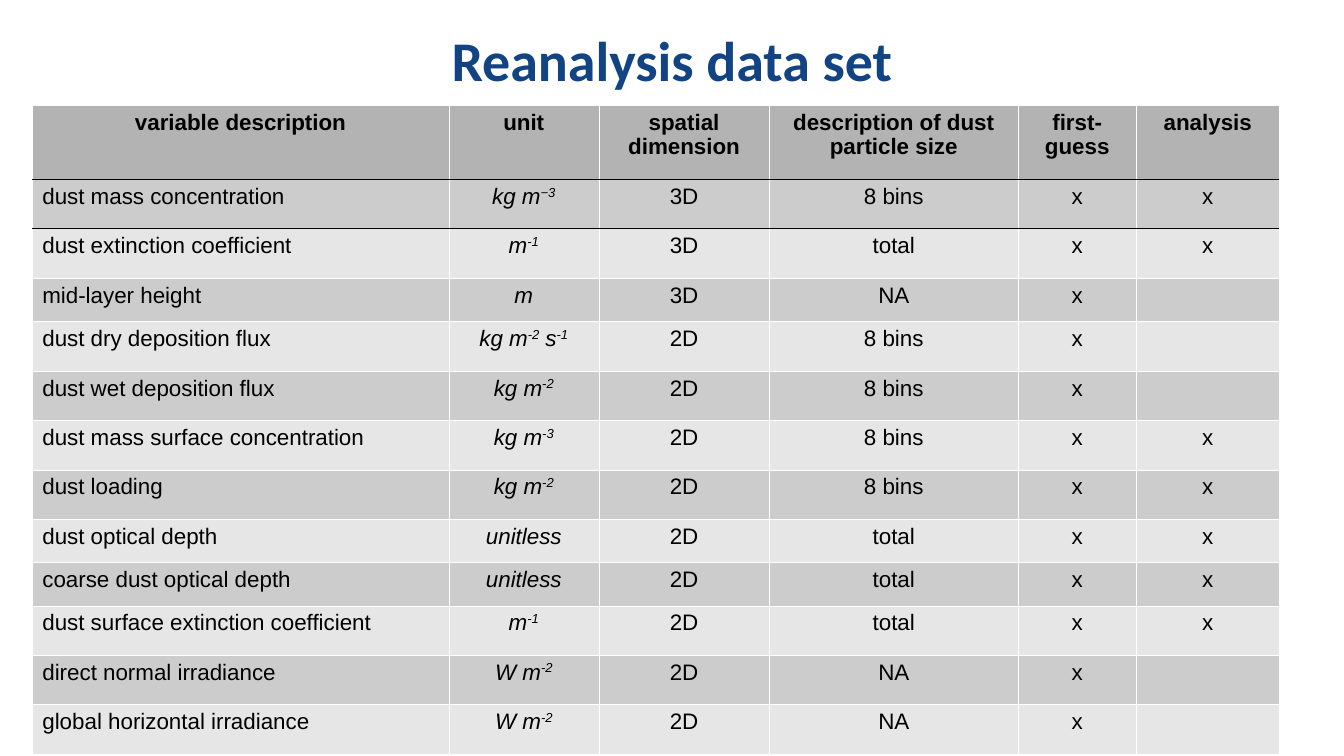
from lxml import etree
from pptx import Presentation
from pptx.dml.color import RGBColor
from pptx.enum.text import MSO_ANCHOR, PP_ALIGN
from pptx.oxml.ns import qn
from pptx.util import Inches, Pt

LEFT, CENTER = PP_ALIGN.LEFT, PP_ALIGN.CENTER
TOP = MSO_ANCHOR.TOP

TITLE_BLUE = RGBColor(0x12, 0x44, 0x84)
BLACK = RGBColor(0x00, 0x00, 0x00)
WHITE = RGBColor(0xFF, 0xFF, 0xFF)
HEADER_GRAY = RGBColor(0xB3, 0xB3, 0xB3)
DARK_BAND = RGBColor(0xCC, 0xCC, 0xCC)
LIGHT_BAND = RGBColor(0xE6, 0xE6, 0xE6)

HAIRLINE, RULE = Pt(0.06), Pt(1)
UNIT_COLUMN = 1
SUPERSCRIPT = "33000"

COLUMN_WIDTHS = [4.13, 1.49, 1.69, 2.47, 1.17, 1.42]
HEADER_HEIGHT, TALL_ROW, SHORT_ROW = 0.74, 0.49, 0.43
SHORT_ROWS = (3, 8, 9)

HEADER = ["variable description", "unit", "spatial\ndimension",
          "description of dust particle size", "first-guess", "analysis"]
# Carets enclose the superscript parts of a unit
VARIABLES = [
    ["dust mass concentration", "kg m^−3", "3D", "8 bins", "x", "x"],
    ["dust extinction coefficient", "m^-1", "3D", "total", "x", "x"],
    ["mid-layer height", "m", "3D", "NA", "x", ""],
    ["dust dry deposition flux", "kg m^-2^ s^-1", "2D", "8 bins", "x", ""],
    ["dust wet deposition flux", "kg m^-2", "2D", "8 bins", "x", ""],
    ["dust mass surface concentration", "kg m^-3", "2D", "8 bins", "x", "x"],
    ["dust loading", "kg m^-2", "2D", "8 bins", "x", "x"],
    ["dust optical depth", "unitless", "2D", "total", "x", "x"],
    ["coarse dust optical depth", "unitless", "2D", "total", "x", "x"],
    ["dust surface extinction coefficient", "m^-1", "2D", "total", "x", "x"],
    ["direct normal irradiance", "W m^-2", "2D", "NA", "x", ""],
    ["global horizontal irradiance", "W m^-2", "2D", "NA", "x", ""],
]


def format_font(font, name, size, color, bold=False, italic=False):
    font.name = name
    font.size = Pt(size)
    font.color.rgb = color
    font.bold = bold
    font.italic = italic


def add_title(slide, left, top, width, height):
    box = slide.shapes.add_textbox(left, top, width, height)
    frame = box.text_frame
    frame.word_wrap = True
    frame.vertical_anchor = TOP
    frame.text = "Reanalysis data set"
    paragraph = frame.paragraphs[0]
    paragraph.alignment = CENTER
    paragraph.line_spacing = 0.9
    format_font(paragraph.runs[0].font, "Calibri", 40, TITLE_BLUE, bold=True)


def set_border(cell, side, color, width):
    properties = cell._tc.get_or_add_tcPr()
    line = etree.SubElement(properties, qn(f"a:ln{side}"), w=str(int(width)))
    fill = etree.SubElement(line, qn("a:solidFill"))
    etree.SubElement(fill, qn("a:srgbClr"), val=str(color))


def fill_cell(cell, text, row, column):
    # Borders: black rules above and below the first variable
    ruled_sides = {0: "B", 1: "TB", 2: "T"}.get(row, "")
    for side in "LRTB":
        if side in ruled_sides:
            set_border(cell, side, BLACK, RULE)
        else:
            set_border(cell, side, WHITE, HAIRLINE)

    # Banded fill
    cell.fill.solid()
    if row == 0:
        cell.fill.fore_color.rgb = HEADER_GRAY
    else:
        cell.fill.fore_color.rgb = DARK_BAND if row % 2 else LIGHT_BAND

    # Text
    is_header = row == 0
    is_unit = column == UNIT_COLUMN and not is_header
    if is_unit:
        paragraph = cell.text_frame.paragraphs[0]
        for index, part in enumerate(text.split("^")):
            run = paragraph.add_run()
            run.text = part
            if index % 2:
                run._r.get_or_add_rPr().set("baseline", SUPERSCRIPT)
    else:
        cell.text_frame.text = text
    for paragraph in cell.text_frame.paragraphs:
        paragraph.alignment = CENTER if is_header or column else LEFT
        for run in paragraph.runs:
            format_font(run.font, "Arial", 16, BLACK, is_header, is_unit)


def add_variable_table(slide, left, top, width, height):
    rows = [HEADER] + VARIABLES
    frame = slide.shapes.add_table(len(rows), len(HEADER), left, top, width, height)
    table = frame.table
    table.first_row = False
    table.horz_banding = False
    for column, column_width in zip(table.columns, COLUMN_WIDTHS):
        column.width = Inches(column_width)
    for row, texts in enumerate(rows):
        row_height = SHORT_ROW if row in SHORT_ROWS else TALL_ROW
        table.rows[row].height = Inches(row_height if row else HEADER_HEIGHT)
        for column, text in enumerate(texts):
            fill_cell(table.cell(row, column), text, row, column)


def main():
    presentation = Presentation()
    presentation.slide_width = Inches(13.33)
    presentation.slide_height = Inches(7.5)
    slide = presentation.slides.add_slide(presentation.slide_layouts[6])
    add_title(slide, Inches(0), Inches(0.28), presentation.slide_width, Inches(0.87))
    add_variable_table(slide, Inches(0.32), Inches(1.04), Inches(12.35), Inches(6.42))
    presentation.save("out.pptx")


if __name__ == "__main__":
    main()
